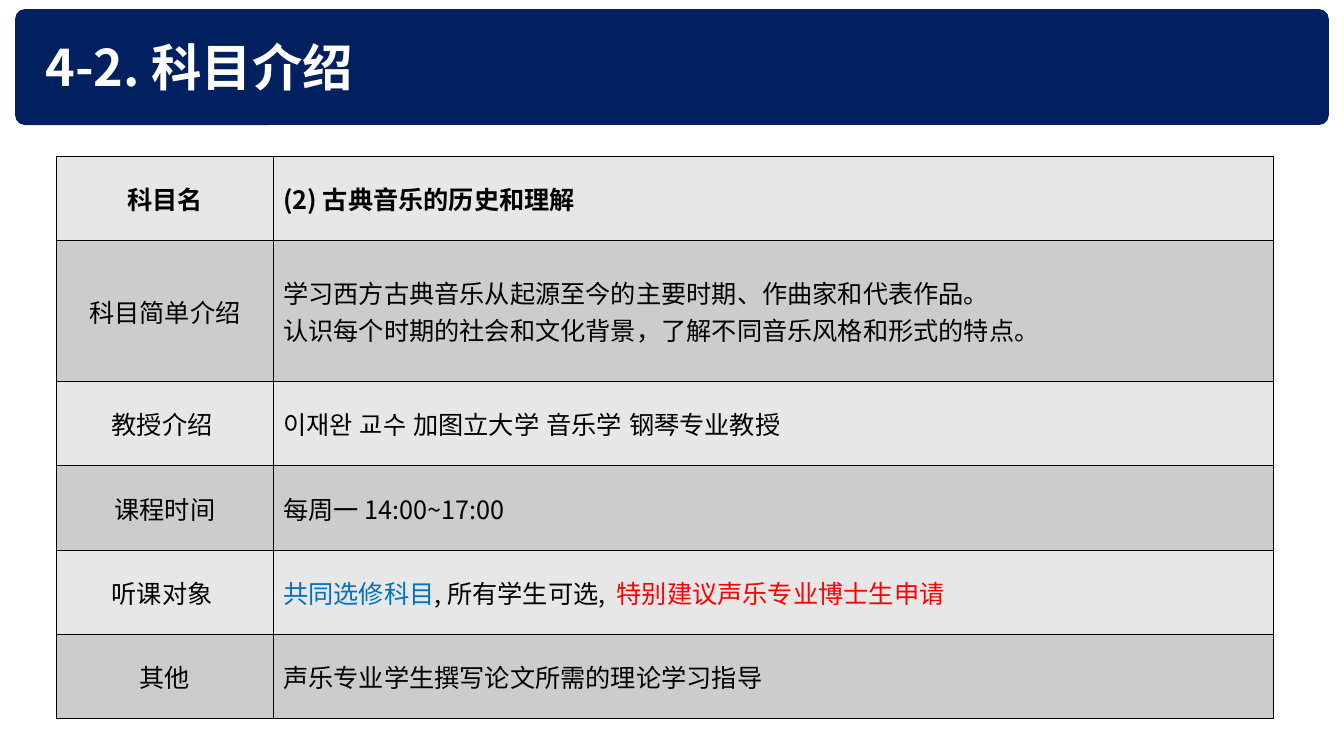
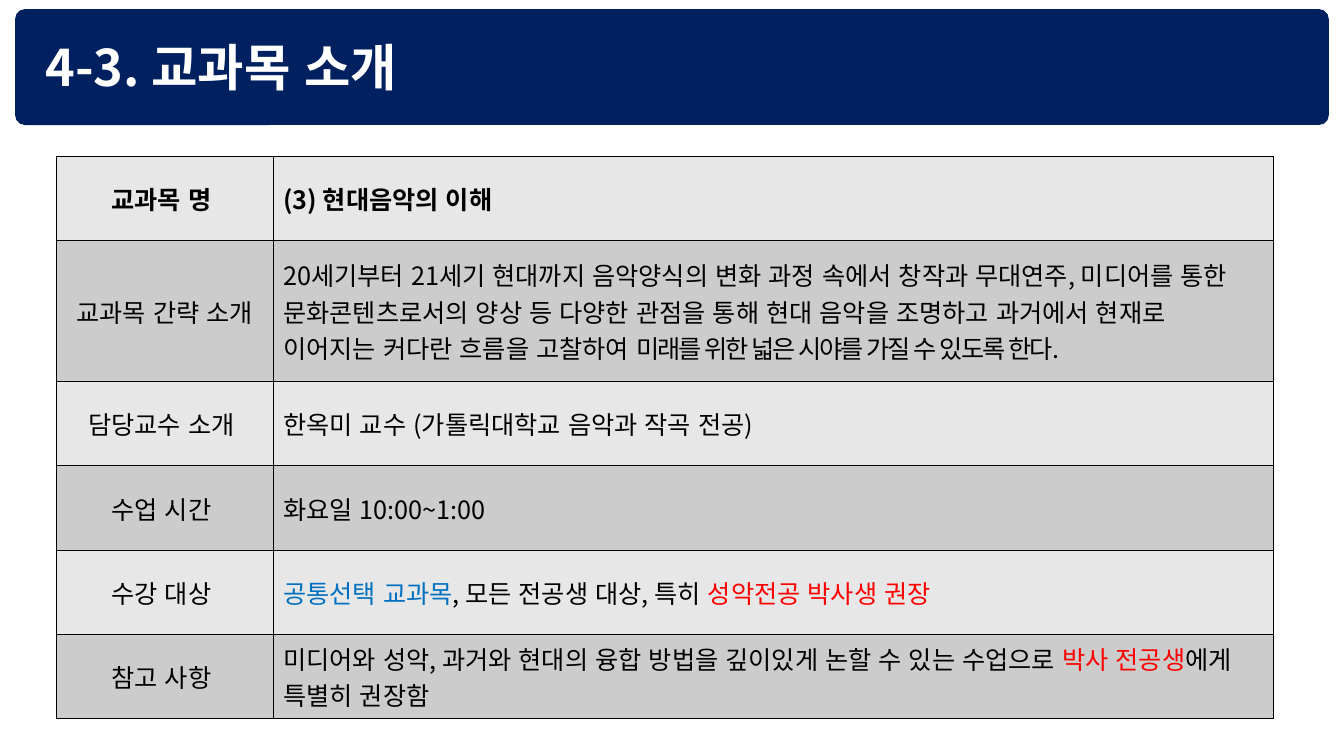
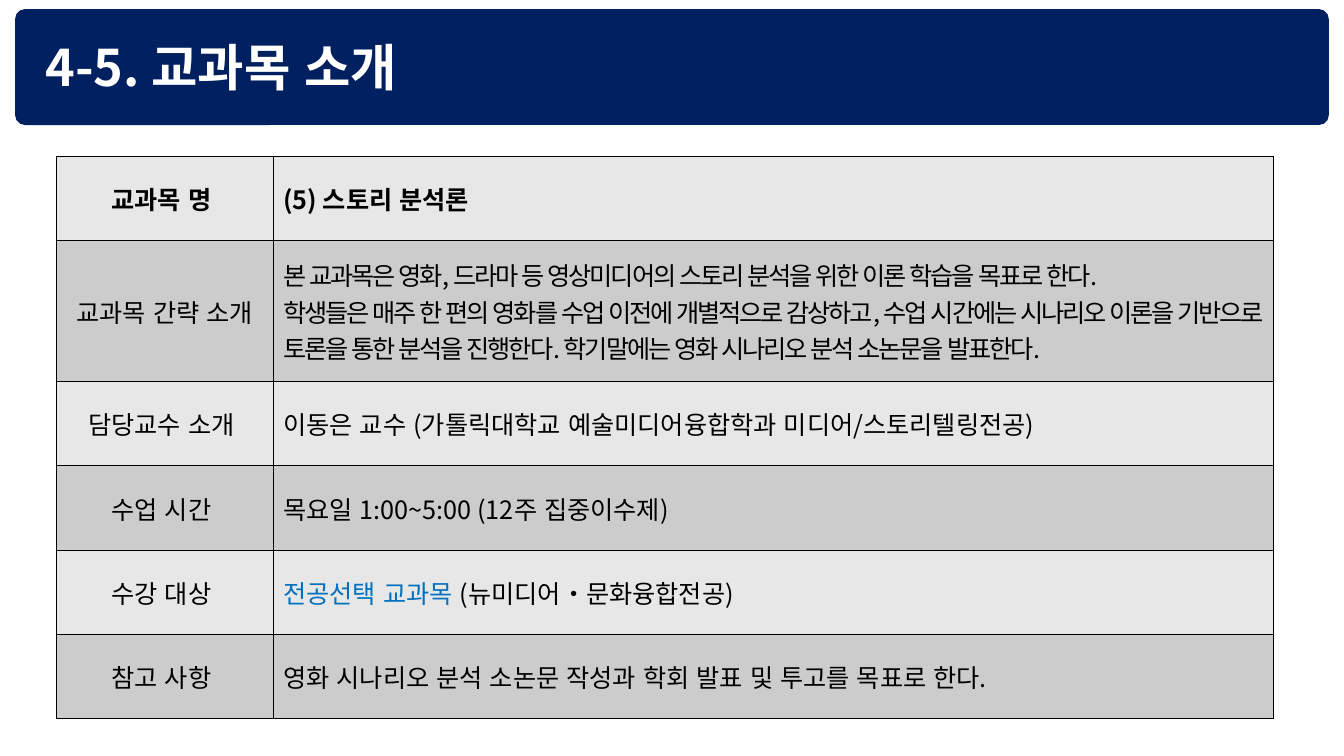
"""Build three course introduction slides, each with a title band and a table."""
import pptx
import pptx.util
import pptx.dml.color
import pptx.enum.lang
import pptx.enum.shapes
import pptx.enum.text
import pptx.oxml.ns
from lxml import etree

Inches = pptx.util.Inches
qn = pptx.oxml.ns.qn
FONT = "Noto Sans CJK KR"
NAVY, BLACK, WHITE, BLUE, RED = "002060", "000000", "FFFFFF", "0070C0", "FF0000"
ROW_FILLS = ["E7E7E7", "CCCCCC"]
COL_WIDTHS = [2.15, 9.92]
TABLE_HEIGHT, INTRO_HEIGHT = 5.58, 1.4
ROW_HEIGHT = (TABLE_HEIGHT - INTRO_HEIGHT) / 5
ROW_HEIGHTS = [ROW_HEIGHT, INTRO_HEIGHT] + [ROW_HEIGHT] * 4
TIGHT = -150


def rgb(value):
    return pptx.dml.color.RGBColor.from_string(value)


def add_text(p, runs, size, base_color, bold):
    p.font.name = FONT
    p.font.size = pptx.util.Pt(size)
    p.font.bold = bold
    p.font.color.rgb = rgb(base_color)
    etree.SubElement(p.font._element, qn("a:ea"), typeface=FONT)
    for text, color, tracking in runs:
        r = p.add_run()
        r.text = text
        if any("가" <= letter <= "힣" for letter in text):
            r.font.language_id = pptx.enum.lang.MSO_LANGUAGE_ID.KOREAN
        if color != base_color:
            r.font.color.rgb = rgb(color)
        if tracking:
            r.font._element.set("spc", str(tracking))


chinese_labels = ["科目名", "科目简单介绍", "教授介绍 ", "课程时间", "听课对象 ", "其他"]
korean_labels = ["교과목 명 ", "교과목 간략 소개", "담당교수 소개 ", "수업 시간 ", "수강 대상 ", "참고 사항 "]

courses = [
    ("4-2. 科目介绍", chinese_labels, [
        [[("(2) 古典音乐的历史和理解", BLACK, 0)]],
        [[("学习西方古典音乐从起源至今的主要时期、作曲家和代表作品。", BLACK, 0)],
         [("认识每个时期的社会和文化背景，了解不同音乐风格和形式的特点。", BLACK, 0)]],
        [[("이재완 교수", BLACK, 0), (" 加图立大学 音乐学 钢琴专业教授", BLACK, 0)]],
        [[("每周一 14:00~17:00", BLACK, 0)]],
        [[("共同选修科目", BLUE, 0), (", 所有学生可选,  ", BLACK, 0),
          ("特别建议声乐专业博士生申请", RED, 0)]],
        [[("声乐专业学生撰写论文所需的理论学习指导", BLACK, 0)]],
    ]),
    ("4-3. 교과목 소개", korean_labels, [
        [[("(3) 현대음악의 이해", BLACK, 0)]],
        [[("20세기부터 21세기 현대까지 음악양식의 변화 과정 속에서 창작과 무대연주, 미디어를 "
           "통한 문화콘텐츠로서의 양상 등 다양한 관점을 통해 현대 음악을 조명하고 과거에서 현재로 "
           "이어지는 커다란 흐름을 고찰하여 ", BLACK, 0),
          ("미래를 위한 넓은 시야를 가질 수 있도록 한다.", BLACK, TIGHT)]],
        [[("한옥미 교수 (가톨릭대학교 음악과 작곡 전공)", BLACK, 0)]],
        [[("화요일 10:00~1:00", BLACK, 0)]],
        [[("공통선택 교과목", BLUE, 0), (", 모든 전공생 대상, 특히 ", BLACK, 0),
          ("성악전공 박사생 권장", RED, 0)]],
        [[("미디어와 성악, 과거와 현대의 융합 방법을 깊이있게 논할 수 있는 수업으로 ", BLACK, 0),
          ("박사 전공생", RED, 0), ("에게 특별히 권장함", BLACK, 0)]],
    ]),
    ("4-5. 교과목 소개", korean_labels, [
        [[("(5) 스토리 분석론", BLACK, 0)]],
        [[("본 교과목은 영화, 드라마 등 영상미디어의 스토리 분석을 위한 이론 학습을 목표로 한다.",
           BLACK, TIGHT)],
         [("학생들은 매주 한 편의 영화를 수업 이전에 개별적으로 감상하고, 수업 시간에는 시나리오 이론을 "
           "기반으로 토론을 통한 분석을 진행한다. 학기말에는 영화 시나리오 분석 소논문을 발표한다.",
           BLACK, TIGHT)]],
        [[("이동은 교수 (가톨릭대학교 예술미디어융합학과 미디어/스토리텔링전공)", BLACK, 0)]],
        [[("목요일 1:00~5:00 (12주 집중이수제)", BLACK, 0)]],
        [[("전공선택 교과목 ", BLUE, 0), ("(뉴미디어・문화융합전공)", BLACK, 0)]],
        [[("영화 시나리오 분석 소논문 작성과 학회 발표 및 투고를 목표로 한다.", BLACK, 0)]],
    ]),
]

prs = pptx.Presentation()
prs.slide_width, prs.slide_height = Inches(13.33), Inches(7.5)

for heading, labels, details in courses:
    s = prs.slides.add_slide(prs.slide_layouts[5])

    band = s.shapes.add_shape(pptx.enum.shapes.MSO_SHAPE.ROUNDED_RECTANGLE,
                              Inches(0.15), Inches(0.09), Inches(13.03), Inches(1.15))
    band.adjustments[0] = 0.085
    band.shadow.inherit = False
    band.fill.solid()
    band.fill.fore_color.rgb = rgb(NAVY)
    band.line.fill.background()
    s.shapes._spTree.insert(2, band._element)

    title = s.shapes.title
    title.left, title.top = Inches(0.35), Inches(0.31)
    title.width, title.height = Inches(11.73), Inches(0.71)
    tf = title.text_frame
    tf.word_wrap = True
    tf.auto_size = pptx.enum.text.MSO_AUTO_SIZE.SHAPE_TO_FIT_TEXT
    tf.vertical_anchor = pptx.enum.text.MSO_ANCHOR.TOP
    tf.paragraphs[0].alignment = pptx.enum.text.PP_ALIGN.LEFT
    add_text(tf.paragraphs[0], [(heading, WHITE, 0)], 36, WHITE, True)

    table = s.shapes.add_table(len(ROW_HEIGHTS), len(COL_WIDTHS), Inches(0.56), Inches(1.55),
                               Inches(sum(COL_WIDTHS)), Inches(TABLE_HEIGHT)).table
    table.first_row = table.horz_banding = False
    for column, width in zip(table.columns, COL_WIDTHS):
        column.width = Inches(width)

    for i, (label, detail) in enumerate(zip(labels, details)):
        table.rows[i].height = Inches(ROW_HEIGHTS[i])
        for j, paragraphs in enumerate([[[(label, BLACK, 0)]], detail]):
            cell = table.cell(i, j)
            cell.vertical_anchor = pptx.enum.text.MSO_ANCHOR.MIDDLE
            for side in ("a:lnL", "a:lnR", "a:lnT", "a:lnB"):
                ln = etree.SubElement(cell._tc.get_or_add_tcPr(), qn(side), w="12700")
                etree.SubElement(etree.SubElement(ln, qn("a:solidFill")), qn("a:srgbClr"), val=BLACK)
            cell.fill.solid()
            cell.fill.fore_color.rgb = rgb(ROW_FILLS[i % 2])

            tf = cell.text_frame
            for k, runs in enumerate(paragraphs):
                p = tf.add_paragraph() if k else tf.paragraphs[0]
                if j == 0:
                    p.alignment = pptx.enum.text.PP_ALIGN.CENTER
                add_text(p, runs, 18, BLACK, i == 0)

prs.save("out.pptx")
